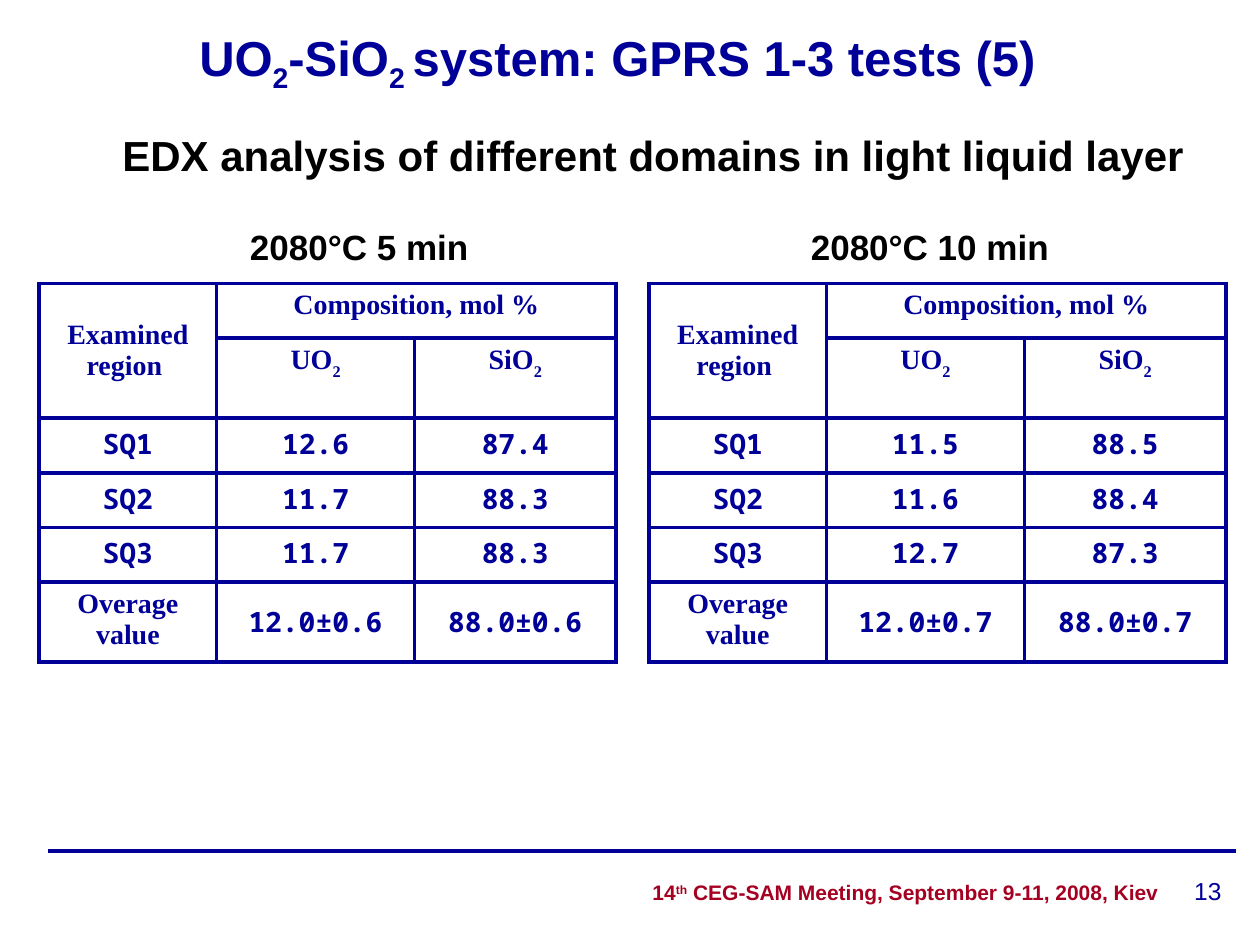
from dataclasses import dataclass
from lxml.etree import SubElement
from pptx import Presentation
from pptx.dml.color import RGBColor as RGB
from pptx.enum.text import MSO_ANCHOR as Anchor, MSO_AUTO_SIZE as Fit, PP_ALIGN as Align
from pptx.oxml import parse_xml
from pptx.oxml.ns import nsdecls, qn
from pptx.util import Inches, Pt


@dataclass(frozen=True)
class Theme:
    blue: RGB = RGB(0x00, 0x00, 0x99)
    red: RGB = RGB(0xA5, 0x00, 0x21)
    black: RGB = RGB(0, 0, 0)
    sans: str = "Arial"
    serif: str = "Times New Roman"
    mono: str = "Noto Sans Mono"
    title: int = 28
    lead: int = 24
    label: int = 20
    cell: int = 16
    page: int = 14
    foot: int = 12
    rule: float = 2.25


T = Theme()
prs = Presentation()
prs.slide_width, prs.slide_height = W, H = Inches(10), Inches(7.5)
slide = prs.slides.add_slide(prs.slide_layouts[5])
shapes = slide.shapes


def area(x, y, w, h):
    """Turn percentages of the slide into left, top, width and height."""
    return [int(W * x / 100), int(H * y / 100), int(W * w / 100), int(H * h / 100)]


def write(para, text, font, size, color, shift=-30, align=Align.CENTER):
    """Fill a bold paragraph; parts between tildes are shifted off the baseline."""
    para.alignment = align
    for i, part in enumerate(text.split("~")):
        if part:
            run = para.add_run()
            run.text = part
            if i % 2:
                run.font._element.set("baseline", str(shift * 1000))
    face = para.font
    face.name, face.size, face.bold = font, Pt(size), True
    face.color.rgb = color


# Title
title = shapes.title
title.left, title.top, title.width, title.height = area(6.5, 2.8, 85, 7.3)
frame = title.text_frame
frame.auto_size, frame.vertical_anchor = Fit.NONE, Anchor.MIDDLE
write(frame.paragraphs[0], "UO~2~-SiO~2 ~system: GPRS 1-3 tests (5)",
      T.sans, T.title, T.blue, shift=-25)

# Headings
for text, size, box in [
    ("EDX analysis of different domains in light liquid layer", T.lead, (6.6, 13.1, 90.5, 6.7)),
    ("2080°C 5 min ", T.label, (14.8, 23.2, 28.2, 5.7)),
    ("2080°C 10 min", T.label, (59.7, 23.2, 28.2, 5.7)),
]:
    frame = shapes.add_textbox(*area(*box)).text_frame
    frame.word_wrap = True
    write(frame.paragraphs[0], text, T.sans, size, T.black)

# Tables
cols = [14.1, 15.7, 16]
rows = [5.75, 8.5, 5.8, 5.8, 5.75, 8.4]
head = [["Examined region ", "Composition, mol %", ""], ["", "UO~2~", "SiO~2~"]]
data = {
    3.1: [["SQ1", "12.6", "87.4"], ["SQ2", "11.7", "88.3"], ["SQ3", "11.7", "88.3"],
          ["Overage value", "12.0±0.6", "88.0±0.6"]],
    51.5: [["SQ1", "11.5", "88.5"], ["SQ2", "11.6", "88.4"], ["SQ3", "12.7", "87.3"],
           ["Overage value", "12.0±0.7", "88.0±0.7"]],
}
last = len(rows) - 1
for left, body in data.items():
    table = shapes.add_table(len(rows), len(cols), *area(left, 30, sum(cols), sum(rows))).table
    table.first_row = table.horz_banding = False
    for col, share in zip(table.columns, cols):
        col.width = int(W * share / 100)
    for row, share in zip(table.rows, rows):
        row.height = int(H * share / 100)
    table.cell(0, 0).merge(table.cell(1, 0))
    table.cell(0, 1).merge(table.cell(0, 2))
    for r, line in enumerate(head + body):
        for c, text in enumerate(line):
            cell = table.cell(r, c)
            cell.fill.background()
            props = cell._tc.get_or_add_tcPr()
            for i, side in enumerate("LRTB"):
                props.insert(i, parse_xml(
                    f'<a:ln{side} {nsdecls("a")} w="{Pt(T.rule)}"><a:solidFill>'
                    f'<a:srgbClr val="{T.blue}"/></a:solidFill></a:ln{side}>'))
            mid = (r, c) == (0, 0) or (r == last and c > 0)
            cell.vertical_anchor = Anchor.MIDDLE if mid else Anchor.TOP
            words = r < len(head) or (r == last and c == 0)
            if text:
                write(cell.text_frame.paragraphs[0], text,
                      T.serif if words else T.mono, T.cell, T.blue)

# Footer
x, y, w, h = area(3.8, 90.1, 94.3, 0)
rule = shapes.add_connector(1, x, y, x + w, y)
rule.line.color.rgb, rule.line.width = T.blue, Pt(T.rule)
SubElement(rule._element.spPr, qn("a:effectLst"))

frame = shapes.add_textbox(*area(50.8, 90.9, 48, 6.7)).text_frame
frame.word_wrap, frame.vertical_anchor = True, Anchor.MIDDLE
para = frame.paragraphs[0]
tabs = SubElement(para._p.get_or_add_pPr(), qn("a:tabLst"))
SubElement(tabs, qn("a:tab"), pos=str(int(W * 0.43)), algn="l")
write(para, "14~th~ CEG-SAM Meeting, September 9-11, 2008, Kiev",
      T.sans, T.foot, T.red, shift=30, align=Align.LEFT)
page = para.add_run()
page.text = "\t13"
page.font.size, page.font.bold = Pt(T.page), False
page.font.color.rgb = T.blue

prs.save("out.pptx")
